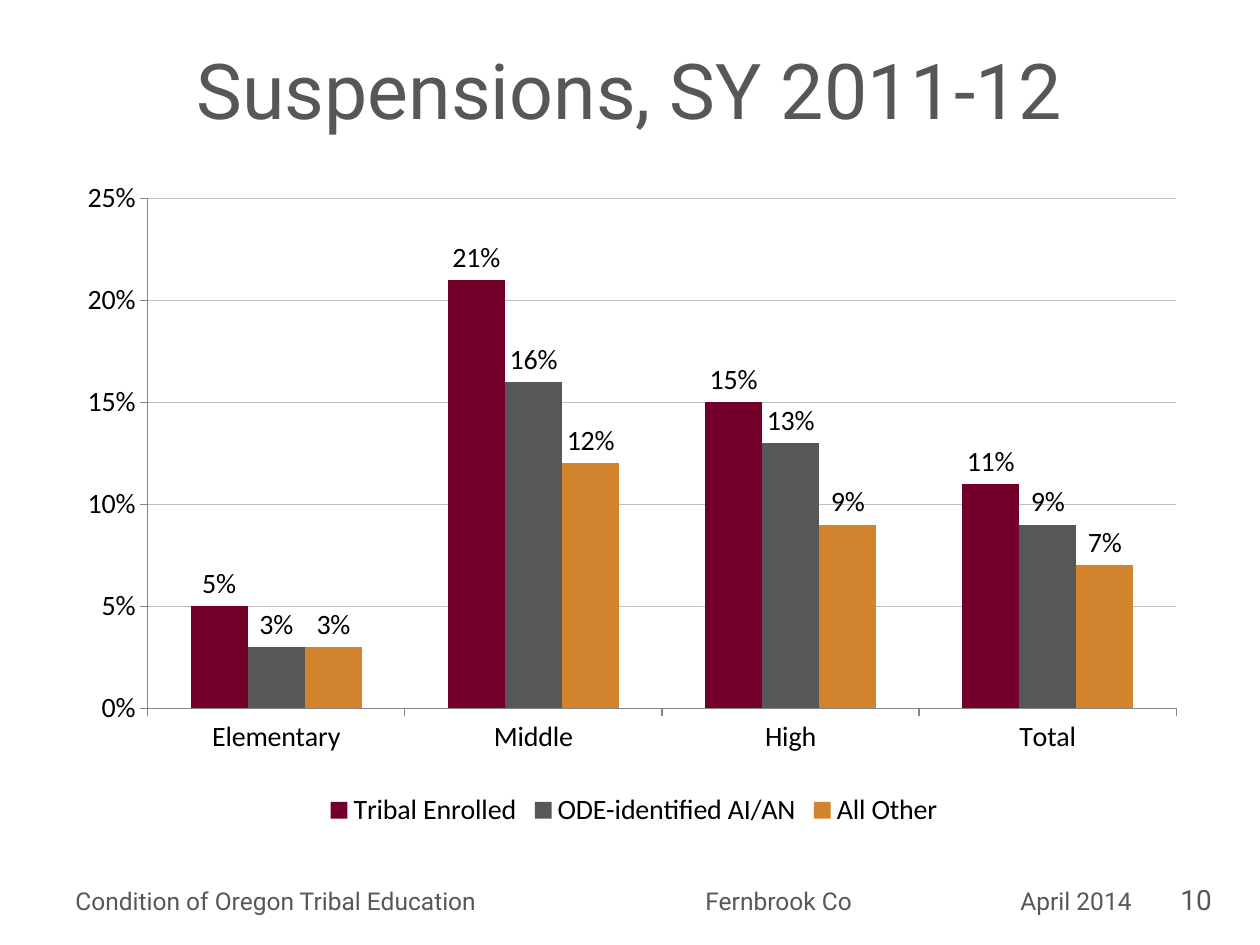
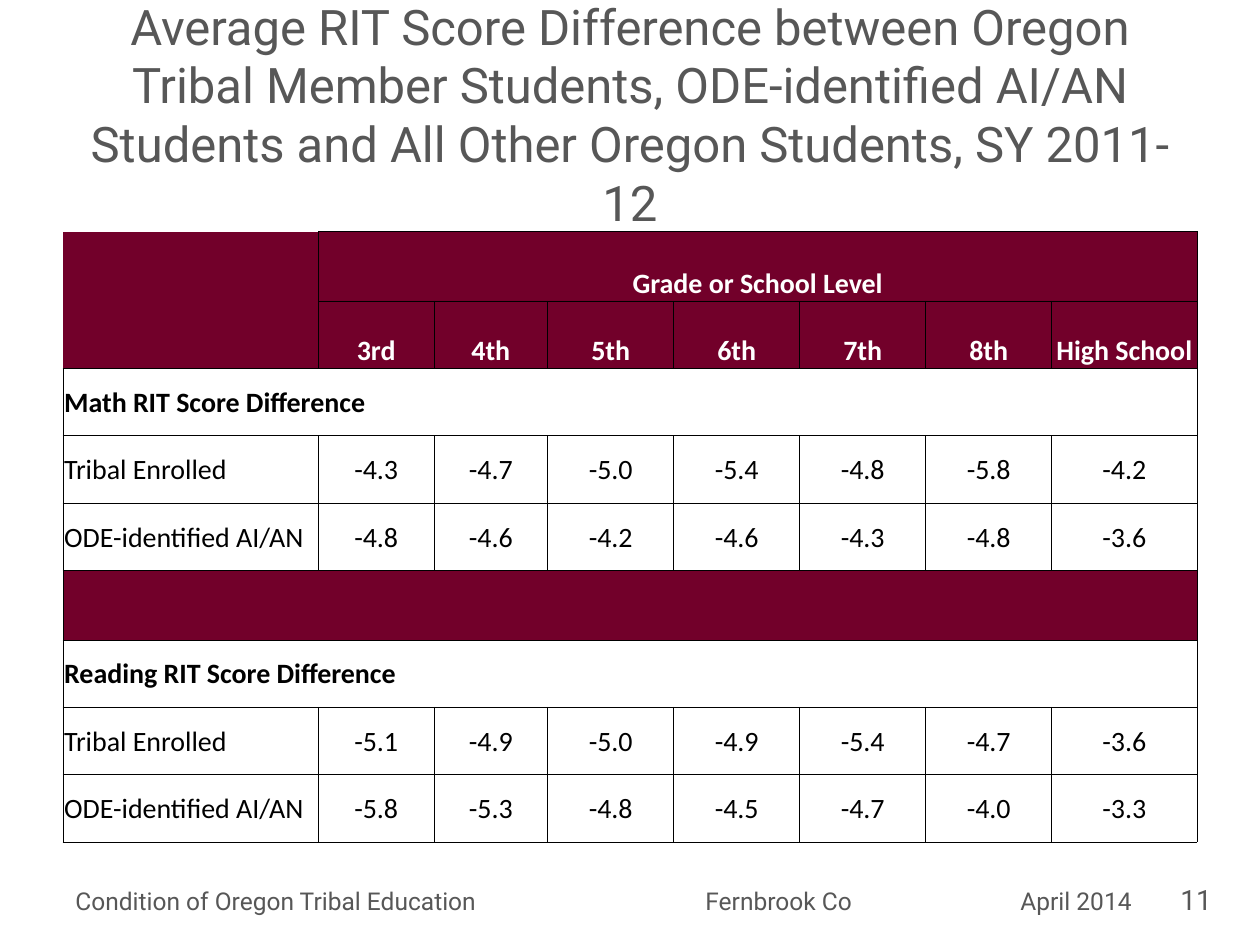
from lxml import etree
from pptx import Presentation
from pptx.chart.data import CategoryChartData
from pptx.dml.color import RGBColor
from pptx.enum.chart import XL_CHART_TYPE as ChartType
from pptx.enum.chart import XL_LABEL_POSITION as LabelPosition
from pptx.enum.chart import XL_LEGEND_POSITION as LegendPosition
from pptx.enum.chart import XL_TICK_MARK as TickMark
from pptx.enum.text import MSO_ANCHOR as Anchor
from pptx.enum.text import MSO_AUTO_SIZE as AutoSize
from pptx.enum.text import PP_ALIGN as Align
from pptx.oxml import parse_xml
from pptx.oxml.ns import nsdecls, qn
from pptx.util import Pt

BURGUNDY = RGBColor(0x72, 0x00, 0x2A)
GREY = RGBColor(0x57, 0x57, 0x57)
OCHRE = RGBColor(0xD1, 0x83, 0x2E)
GRID_GREY = RGBColor(0xBF, 0xBF, 0xBF)
AXIS_GREY = RGBColor(0x86, 0x86, 0x86)
BLACK = RGBColor(0, 0, 0)
WHITE = RGBColor(0xFF, 0xFF, 0xFF)
TEXT_FONT, DATA_FONT = "Roboto", "Calibri"
TITLE_ONLY = 5

FOOTER_PARTS = ("Condition of Oregon Tribal Education", "Fernbrook Co", "April 2014")
FOOTER_TABS = (360, 540)

SCHOOL_LEVELS = ("Elementary", "Middle", "High", "Total")
SUSPENSIONS = (
    ("Tribal Enrolled", (0.05, 0.21, 0.15, 0.11), BURGUNDY),
    ("ODE-identified AI/AN", (0.03, 0.16, 0.13, 0.09), GREY),
    ("All Other", (0.03, 0.12, 0.09, 0.07), OCHRE),
)

GRADES = ("3rd", "4th", "5th", "6th", "7th", "8th", "High School")
SCORE_ROWS = (
    ("", "Grade or School Level"),
    ("",) + GRADES,
    ("Math RIT Score Difference",),
    ("Tribal Enrolled", "-4.3", "-4.7", "-5.0", "-5.4", "-4.8", "-5.8", "-4.2"),
    ("ODE-identified AI/AN", "-4.8", "-4.6", "-4.2", "-4.6", "-4.3", "-4.8", "-3.6"),
    ("",),
    ("Reading RIT Score Difference",),
    ("Tribal Enrolled", "-5.1", "-4.9", "-5.0", "-4.9", "-5.4", "-4.7", "-3.6"),
    ("ODE-identified AI/AN", "-5.8", "-5.3", "-4.8", "-4.5", "-4.7", "-4.0", "-3.3"),
)
HEADER_ROWS = (0, 1)
BAND_ROWS = (0, 1, 5)
TALL_ROWS = (0, 5)
COLUMN_WIDTHS = (146, 66, 65, 72, 72, 72, 72, 83)


def points(box):
    return [Pt(length) for length in box]


def set_font(font, name, size, color, bold=False):
    font.name, font.size, font.bold = name, Pt(size), bold
    font.color.rgb = color


def add_title(slide, text, size, box):
    title = slide.shapes.title
    title.left, title.top, title.width, title.height = points(box)
    frame = title.text_frame
    frame.text = text
    frame.auto_size = AutoSize.NONE
    frame.vertical_anchor = Anchor.MIDDLE
    paragraph = frame.paragraphs[0]
    paragraph.alignment = Align.CENTER
    set_font(paragraph.font, TEXT_FONT, size, GREY)


def add_footer_text(slide, text, size, box):
    frame = slide.shapes.add_textbox(*points(box)).text_frame
    frame.word_wrap = True
    frame.text = text
    paragraph = frame.paragraphs[0]
    set_font(paragraph.font, TEXT_FONT, size, GREY)
    return paragraph


def add_footer(slide, number, box):
    left, top, width, height = box
    number_width = 50
    line_width = width - number_width
    line = add_footer_text(slide, "\t".join(FOOTER_PARTS), 14,
                           (left, top + 2, line_width, height - 2))
    stops = "".join(f'<a:tab pos="{Pt(stop)}" algn="l"/>' for stop in FOOTER_TABS)
    tab_list = parse_xml(f'<a:tabLst {nsdecls("a")}>{stops}</a:tabLst>')
    line._p.get_or_add_pPr().insert(0, tab_list)
    add_footer_text(slide, str(number), 16,
                    (left + line_width, top, number_width, height))


def add_slide(deck, number, title, title_size, title_top):
    slide = deck.slides.add_slide(deck.slide_layouts[TITLE_ONLY])
    add_title(slide, title, title_size, (36, title_top, 648, 71))
    add_footer(slide, number, (36, 501, 681.5, 26.5))
    return slide


def set_plot_area(chart, x, y, w, h):
    """Fix the inner plot area as fractions of the chart."""
    plot_area = chart._chartSpace.chart.plotArea
    for old in plot_area.findall(qn("c:layout")):
        plot_area.remove(old)
    layout = etree.Element(qn("c:layout"))
    manual = etree.SubElement(layout, qn("c:manualLayout"))
    settings = (("layoutTarget", "inner"), ("xMode", "edge"), ("yMode", "edge"),
                ("x", x), ("y", y), ("w", w), ("h", h))
    for tag, value in settings:
        etree.SubElement(manual, qn(f"c:{tag}")).set("val", str(value))
    plot_area.insert(0, layout)


def add_suspension_chart(slide, box):
    data = CategoryChartData(number_format="0%")
    data.categories = SCHOOL_LEVELS
    for name, rates, _ in SUSPENSIONS:
        data.add_series(name, rates)
    chart = slide.shapes.add_chart(
        ChartType.COLUMN_CLUSTERED, *points(box), data).chart
    set_font(chart.font, DATA_FONT, 16, BLACK)
    chart.has_title = False
    chart.has_legend = True
    chart.legend.position = LegendPosition.BOTTOM
    chart.legend.include_in_layout = False
    set_plot_area(chart, 0.085, 0.069, 0.878, 0.748)

    for axis in (chart.category_axis, chart.value_axis):
        axis.major_tick_mark = TickMark.OUTSIDE
        axis.minor_tick_mark = TickMark.NONE
        axis.format.line.color.rgb = AXIS_GREY
    rate_axis = chart.value_axis
    rate_axis.minimum_scale, rate_axis.maximum_scale = 0, 0.25
    rate_axis.major_unit = 0.05
    rate_axis.tick_labels.number_format = "0%"
    rate_axis.tick_labels.number_format_is_linked = False
    rate_axis.has_major_gridlines = True
    grid_line = rate_axis.major_gridlines.format.line
    grid_line.color.rgb, grid_line.width = GRID_GREY, Pt(0.75)

    plot = chart.plots[0]
    plot.gap_width, plot.overlap = 150, 0
    plot.vary_by_categories = False
    for series, (_, _, color) in zip(plot.series, SUSPENSIONS):
        series.format.fill.solid()
        series.format.fill.fore_color.rgb = color
        labels = series.data_labels
        labels.show_value = True
        labels.position = LabelPosition.OUTSIDE_END
        labels.number_format, labels.number_format_is_linked = "0%", False


def set_borders(cell, sides):
    """Draw thin black lines on the named sides and none on the others."""
    properties = cell._tc.get_or_add_tcPr()
    for side in "LRTB":
        line = etree.SubElement(properties, qn(f"a:ln{side}"), w=str(Pt(0.5)))
        if side in sides:
            fill = etree.SubElement(line, qn("a:solidFill"))
            etree.SubElement(fill, qn("a:srgbClr"), val=str(BLACK))
        else:
            etree.SubElement(line, qn("a:noFill"))


def format_score_cell(cell, row, column):
    corner_sides = {(0, 0): "R", (1, 0): "RB"}
    set_borders(cell, corner_sides.get((row, column), "LRTB"))
    if row in BAND_ROWS:
        cell.fill.solid()
        cell.fill.fore_color.rgb = BURGUNDY
    else:
        cell.fill.background()
    cell.margin_left = cell.margin_right = cell.margin_top = Pt(0.7)
    cell.margin_bottom = 0
    is_header = row in HEADER_ROWS
    cell.vertical_anchor = Anchor.BOTTOM if is_header else Anchor.MIDDLE
    paragraph = cell.text_frame.paragraphs[0]
    paragraph.alignment = Align.CENTER if column else Align.LEFT
    is_bold = is_header or len(SCORE_ROWS[row]) == 1
    set_font(paragraph.font, DATA_FONT, 16, WHITE if is_header else BLACK, is_bold)


def add_score_table(slide, box):
    row_count, column_count = len(SCORE_ROWS), len(COLUMN_WIDTHS)
    table = slide.shapes.add_table(row_count, column_count, *points(box)).table
    table.first_row = table.horz_banding = False
    for column, width in zip(table.columns, COLUMN_WIDTHS):
        column.width = Pt(width)
    for index, texts in enumerate(SCORE_ROWS):
        table.rows[index].height = Pt(39.6 if index in TALL_ROWS else 38.5)
        for column, text in enumerate(texts):
            table.cell(index, column).text = text
        for column in range(column_count):
            format_score_cell(table.cell(index, column), index, column)
        if len(texts) < column_count:
            first = table.cell(index, len(texts) - 1)
            first.merge(table.cell(index, column_count - 1))


def main():
    deck = Presentation()
    deck.slide_width, deck.slide_height = Pt(720), Pt(540)
    suspensions = add_slide(deck, 10, "Suspensions, SY 2011-12", 44, 15)
    add_suspension_chart(suspensions, (27.5, 86.5, 669.5, 389.5))
    scores = add_slide(
        deck, 11,
        "Average RIT Score Difference between Oregon Tribal Member Students, "
        "ODE-identified AI/AN Students and All Other Oregon Students, SY 2011-12",
        28, 29.5)
    add_score_table(scores, (36, 132.5, 648, 348.7))
    deck.save("out.pptx")


if __name__ == "__main__":
    main()
